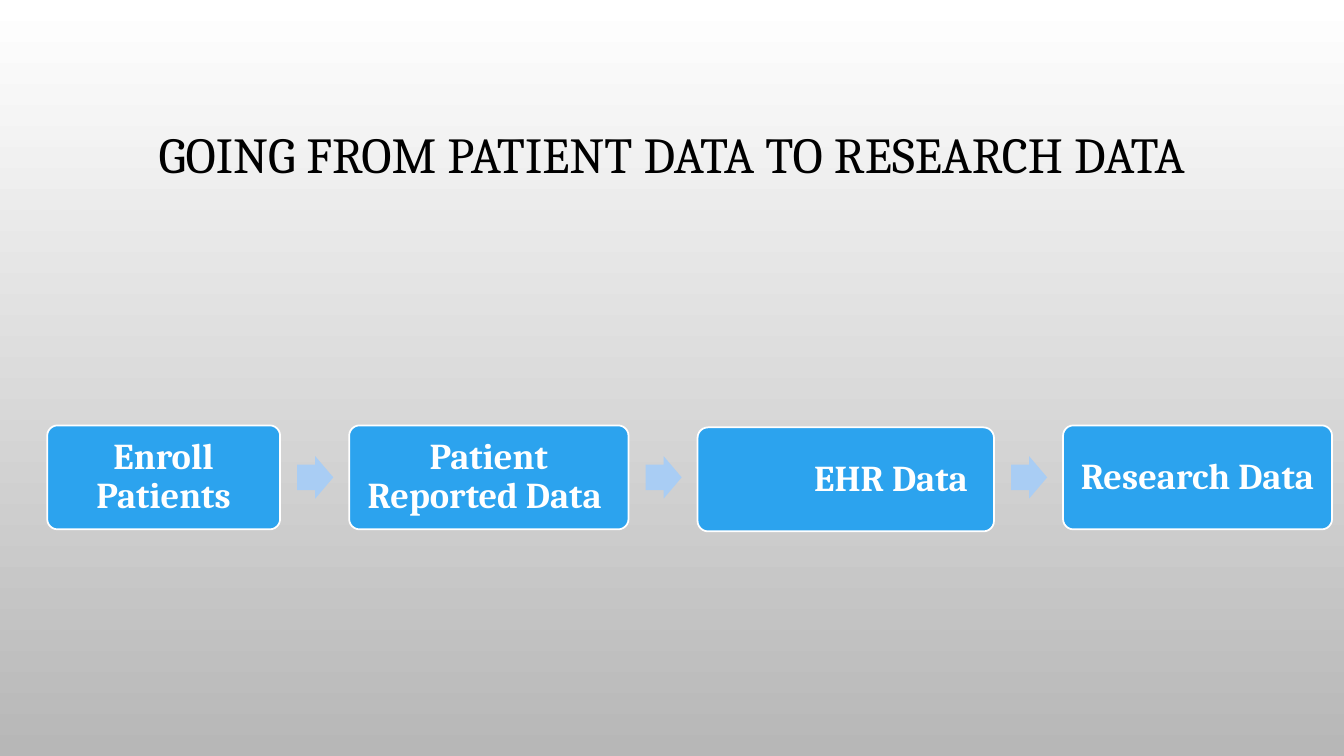
from pptx import Presentation
from pptx.dml.color import RGBColor
from pptx.enum.shapes import MSO_SHAPE as Kind
from pptx.enum.text import MSO_ANCHOR as Anchor, PP_ALIGN as Align
from pptx.util import Cm, Pt

FONT = "Cambria"
STEPS = [
    ("Enroll Patients", 5.87, 0, Align.CENTER, 0.36),
    ("Patient Reported Data ", 7.04, 0, Align.CENTER, 0.36),
    ("EHR Data", 7.47, 0.05, Align.RIGHT, 0.58),
    ("Research Data", 6.78, 0, Align.CENTER, 0.36),
]


def tint(color, code):
    color.rgb = RGBColor.from_string(code)


def write(shape, text, size, code, bold, align):
    frame = shape.text_frame
    frame.text = text
    frame.word_wrap = True
    frame.vertical_anchor = Anchor.MIDDLE
    para = frame.paragraphs[0]
    para.alignment = align
    para.line_spacing = 0.9
    font = para.runs[0].font
    font.name, font.size, font.bold = FONT, Pt(size), bold
    tint(font.color, code)


def draw(slide, kind, left, top, width, height, code):
    shape = slide.shapes.add_shape(kind, Cm(left), Cm(top), Cm(width), Cm(height))
    shape.shadow.inherit = False
    shape.fill.solid()
    tint(shape.fill.fore_color, code)
    return shape


def paint(slide):
    fill = slide.background.fill
    fill.gradient()
    fill.gradient_angle = 270
    for stop, place, code in zip(fill.gradient_stops, (0, 1), ("FFFFFF", "B7B7B7")):
        stop.position = place
        tint(stop.color, code)


def add_title(slide, left, top, width, height):
    box = slide.shapes.add_textbox(Cm(left), Cm(top), Cm(width), Cm(height))
    write(box, "GOING FROM PATIENT DATA TO RESEARCH DATA", 36, "000000", False, Align.CENTER)


def add_step(slide, left, top, width, height, text, align, inset):
    card = draw(slide, Kind.ROUNDED_RECTANGLE, left, top, width, height, "2CA3EE")
    card.adjustments[0] = 0.1
    tint(card.line.color, "FFFFFF")
    card.line.width = Pt(1.25)
    write(card, text, 26, "FFFFFF", True, align)
    frame = card.text_frame
    frame.margin_left = frame.margin_top = frame.margin_bottom = Cm(0.36)
    frame.margin_right = Cm(inset)


def add_arrow(slide, left, top, width, height):
    arrow = draw(slide, Kind.RIGHT_ARROW, left, top, width, height, "A9CDF4")
    arrow.adjustments[0] = 0.6
    arrow.adjustments[1] = 0.5
    arrow.line.fill.background()


def add_flow(slide, left, top, height, gap):
    wide, tall = 0.91, 1.07
    for spot, (text, width, drop, align, inset) in enumerate(STEPS):
        if spot:
            add_arrow(slide, left - gap + 0.43, top + (height - tall) / 2, wide, tall)
        add_step(slide, left, top + drop, width, height, text, align, inset)
        left += width + gap


def main():
    deck = Presentation()
    deck.slide_width, deck.slide_height = Cm(33.87), Cm(19.05)
    slide = deck.slides.add_slide(deck.slide_layouts[6])
    paint(slide)
    add_title(slide, 2.54, 1.73, 28.78, 4.45)
    add_flow(slide, 1.19, 10.72, 2.62, 1.74)
    deck.save("out.pptx")


if __name__ == "__main__":
    main()
